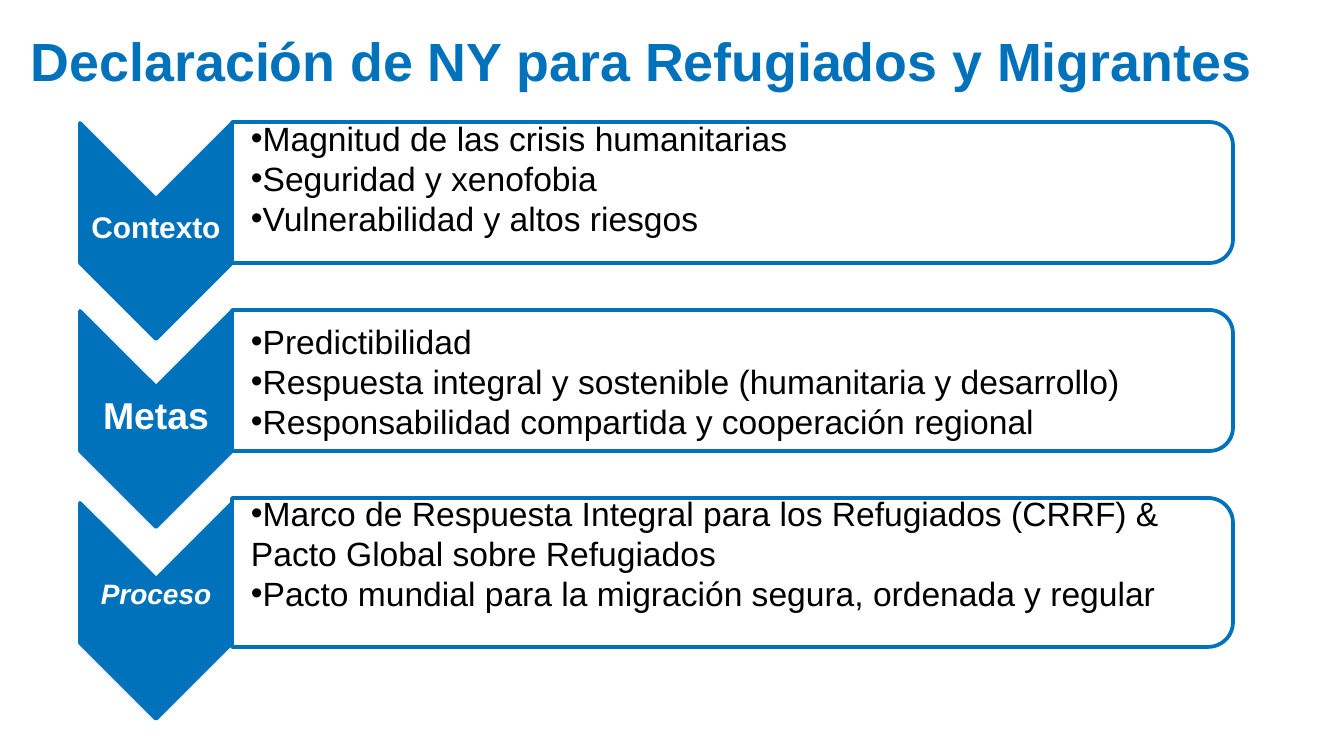
import pptx
import pptx.util
import pptx.dml.color
import pptx.enum.shapes
import pptx.enum.text
from lxml import etree

# Content
TITLE = "Declaración de NY para Refugiados y Migrantes"
# Lengths in px: chevron centre, label centre, panel top and height, text top
ROWS = [
    dict(label="Contexto", size=16, slant=False, mid=231, name=229,
         top=122, high=141, text=118,
         items=["Magnitud de las crisis humanitarias",
                "Seguridad y xenofobia",
                "Vulnerabilidad y altos riesgos"]),
    dict(label="Metas", size=20, slant=False, mid=419, name=417,
         top=310, high=141, text=321,
         items=["Predictibilidad",
                "Respuesta integral y sostenible (humanitaria y desarrollo)",
                "Responsabilidad compartida y cooperación regional"]),
    dict(label="Proceso", size=15, slant=True, mid=611, name=596,
         top=498, high=149, text=493,
         items=["Marco de Respuesta Integral para los Refugiados (CRRF) & "
                "Pacto Global sobre Refugiados",
                "Pacto mundial para la migración segura, ordenada y regular"]),
]
COLORS = dict(blue="0072BC", white="FFFFFF", black="000000")
FONT = "Arial"
LEFT, STEM, WIDE = 80, 152, 1001   # chevron left, chevron width, panel width
LONG = 216                         # chevron length
PAD = 19                           # text inset in a panel
LINE = 21.4                        # list line height in points

SHAPE = pptx.enum.shapes.MSO_SHAPE
ALIGN = pptx.enum.text.PP_ALIGN
ANCHOR = pptx.enum.text.MSO_ANCHOR
SCALE = 914400 / 134.4


def px(n):
    return pptx.util.Emu(round(n * SCALE))


def color(name):
    return pptx.dml.color.RGBColor.from_string(COLORS[name])


def turned(kind, x, y, wide, high, fill):
    """Draw a shape turned a quarter, centred on x, y."""
    shape = slide.shapes.add_shape(
        kind, px(x - wide / 2), px(y - high / 2), px(wide), px(high))
    shape.rotation = 90
    shape.shadow.inherit = False
    shape.fill.solid()
    shape.fill.fore_color.rgb = color(fill)
    shape.line.color.rgb = color("blue")
    shape.line.width = pptx.util.Pt(2)
    return shape


def write(lines, box, size, tint, anchor, bold=False, slant=False,
          align=ALIGN.LEFT, space=0.9, dots=False):
    frame = slide.shapes.add_textbox(*map(px, box)).text_frame
    frame.word_wrap = True
    frame.vertical_anchor = anchor
    frame.margin_left = frame.margin_right = 0
    frame.margin_top = frame.margin_bottom = 0
    for i, line in enumerate(lines):
        para = frame.paragraphs[0] if i == 0 else frame.add_paragraph()
        para.text = line
        para.alignment = align
        para.line_spacing = space
        if dots:
            props = para._p.get_or_add_pPr()
            props.set("marL", "0")
            props.set("indent", "0")
            tag = pptx.oxml.ns.qn
            etree.SubElement(props, tag("a:buFont")).set("typeface", FONT)
            etree.SubElement(props, tag("a:buChar")).set("char", "•")
        font = para.font
        font.name = FONT
        font.size = pptx.util.Pt(size)
        font.bold = bold
        font.italic = slant
        font.color.rgb = color(tint)


deck = pptx.Presentation()
deck.slide_width, deck.slide_height = px(1344), px(756)
slide = deck.slides.add_slide(deck.slide_layouts[6])

# Title
write([TITLE], (31, 0, 1286, 93), 28.8, "blue", ANCHOR.BOTTOM, bold=True)

# Rows: chevron, label, panel, list
edge = LEFT + STEM
for row in ROWS:
    turned(SHAPE.CHEVRON, LEFT + STEM / 2, row["mid"], LONG, STEM, "blue")
    write([row["label"]], (LEFT, row["name"] - 32, STEM, 64), row["size"],
          "white", ANCHOR.MIDDLE, bold=True, slant=row["slant"],
          align=ALIGN.CENTER)
    turned(SHAPE.ROUND_2_SAME_RECTANGLE, edge + WIDE / 2,
           row["top"] + row["high"] / 2, row["high"], WIDE, "white")
    write(row["items"], (edge + PAD, row["text"], WIDE - 2 * PAD, 126), 18,
          "black", ANCHOR.TOP, space=pptx.util.Pt(LINE), dots=True)

deck.save("out.pptx")
